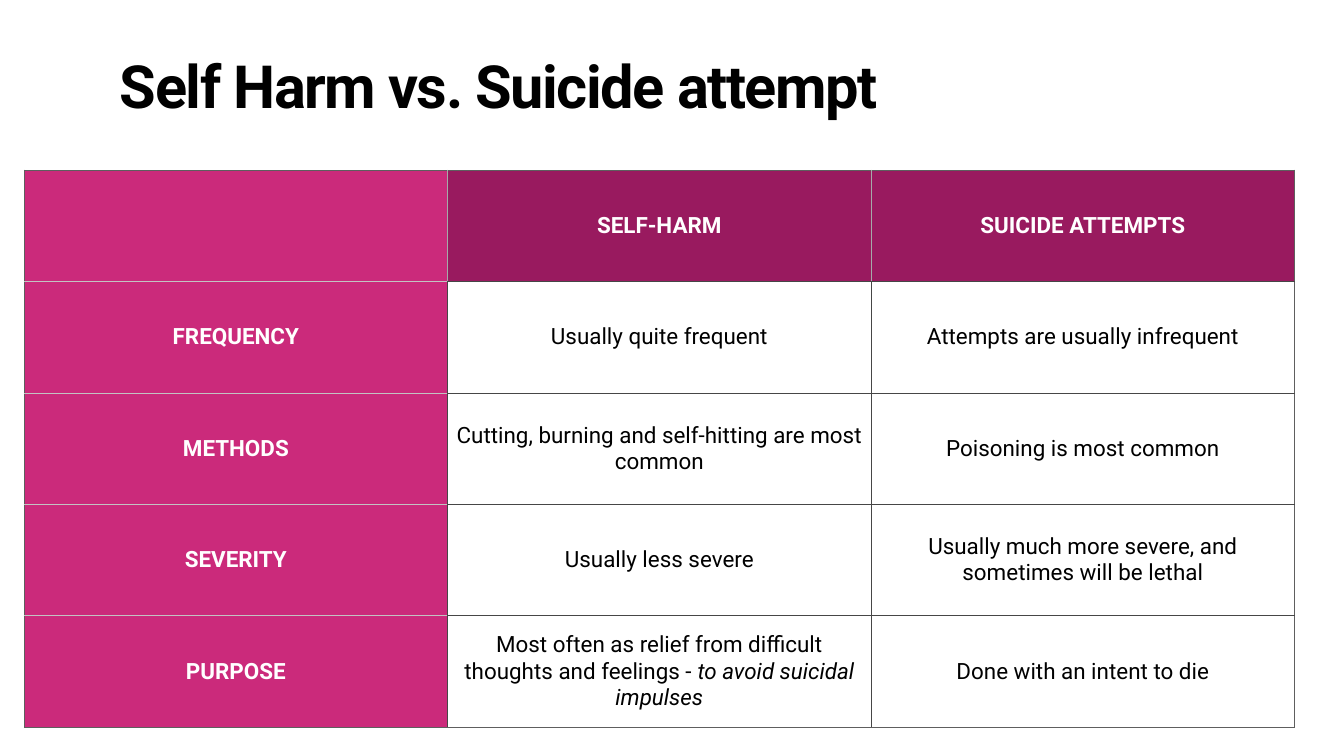
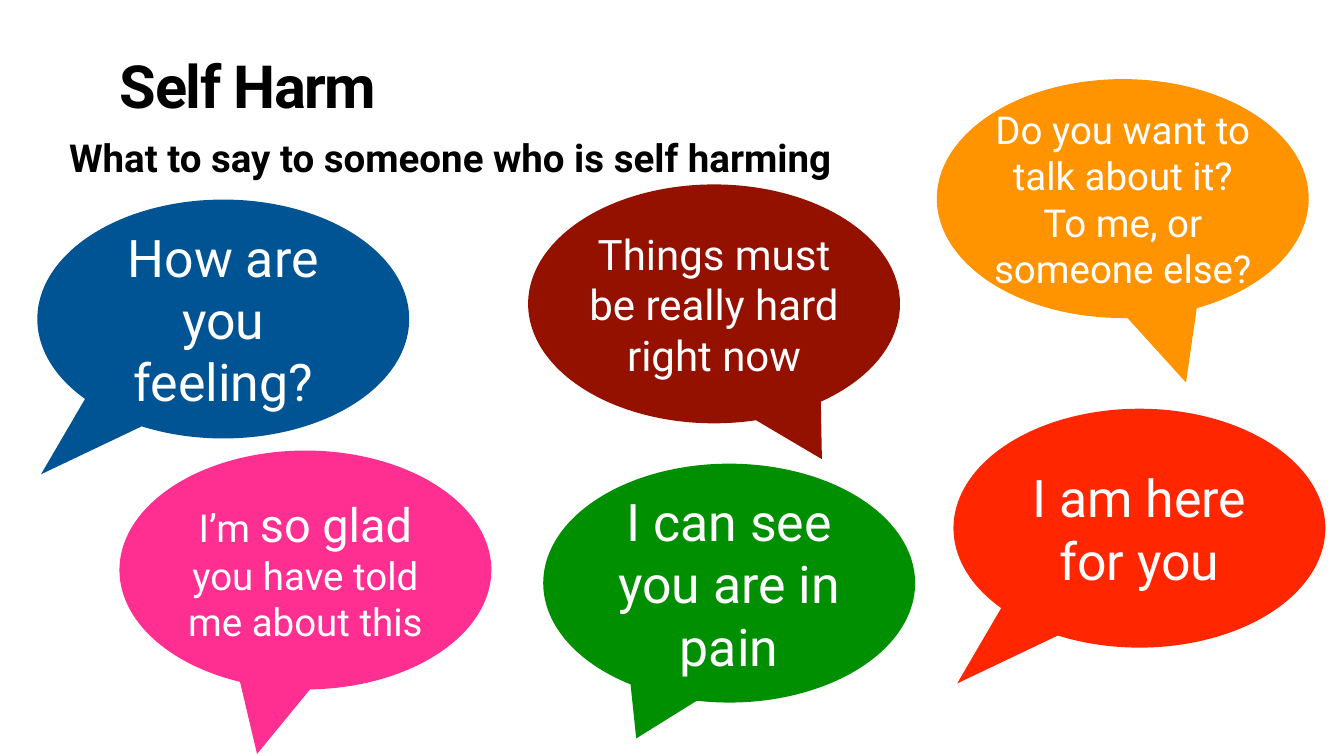
"""Build two slides on self harm: a comparison table and speech bubbles."""
from dataclasses import dataclass

from lxml import etree
from pptx import Presentation
from pptx.dml.color import RGBColor
from pptx.enum.shapes import MSO_SHAPE
from pptx.enum.text import MSO_ANCHOR, PP_ALIGN
from pptx.oxml.ns import qn
from pptx.util import Inches, Pt

CALLOUT = MSO_SHAPE.OVAL_CALLOUT
MIDDLE, TOP = MSO_ANCHOR.MIDDLE, MSO_ANCHOR.TOP
CENTER, LEFT = PP_ALIGN.CENTER, PP_ALIGN.LEFT

FONT = "Roboto"
BLACK, WHITE = "000000", "FFFFFF"
HEADER_FILL, LABEL_FILL = "991A5F", "CB2A7B"
OUTER_LINE, LABEL_LINE = "5E5E5E", "C3C3C3"
HEADER_LINE, BODY_LINE = "A6AAA9", "464646"
INSET = 0.06
BUBBLE_WIDTH, BUBBLE_HEIGHT = 7.38, 4.74
WORDS_WIDTH = 5.26
TABLE_AREA = (0.48, 3.37, 25.21, 11.06)


@dataclass(frozen=True)
class Span:
    """A piece of text with one size and slant."""
    text: str
    size: float
    italic: bool = False


@dataclass(frozen=True)
class Bubble:
    """A speech bubble with its tail tip and words."""
    left: float
    top: float
    tail: tuple[float, float]
    color: str
    words_height: float
    spans: tuple[Span, ...]


ROWS = (
    ("", "SELF-HARM", "SUICIDE ATTEMPTS"),
    ("FREQUENCY", "Usually quite frequent", "Attempts are usually infrequent"),
    ("METHODS", "Cutting, burning and self-hitting are most common",
     "Poisoning is most common"),
    ("SEVERITY", "Usually less severe",
     "Usually much more severe, and sometimes will be lethal"),
    ("PURPOSE",
     "Most often as relief from difficult thoughts and feelings - |to avoid suicidal impulses",
     "Done with an intent to die"),
)

BUBBLES = (
    Bubble(0.74, 3.96, (-0.49, 0.65), "005493", 3.83, (Span("How are you feeling?", 74),)),
    Bubble(10.48, 3.66, (0.29, 0.65), "941100", 4.2,
           (Span("Things must be really hard right now", 60),)),
    Bubble(2.37, 8.94, (-0.13, 0.77), "FF2F92", 3.12,
           (Span("I’m ", 55), Span("so glad", 67), Span(" you have told me about this", 55))),
    Bubble(18.59, 1.57, (0.17, 0.77), "FF9300", 4.81,
           (Span("Do you want to talk about it? To me, or someone else?", 55),)),
    Bubble(18.92, 8.11, (-0.49, 0.65), "FF2600", 2.58, (Span("I am here for you", 74),)),
    Bubble(10.78, 9.2, (-0.25, 0.65), "008F00", 3.83, (Span("I can see you are in pain", 74),)),
)


def rgb(color: str) -> RGBColor:
    """Turn a hex string into a colour."""
    return RGBColor.from_string(color)


def apply(target, values: dict) -> None:
    """Set each named attribute on the target."""
    for name, value in values.items():
        setattr(target, name, value)


def write(para, spans, color: str, bold: bool, align) -> None:
    """Fill a paragraph with formatted spans."""
    para.alignment = align
    for span in spans:
        run = para.add_run()
        run.text = span.text
        apply(run.font, {"name": FONT, "size": Pt(span.size),
                         "bold": bold, "italic": span.italic})
        run.font.color.rgb = rgb(color)


def margins(inset: float) -> dict:
    """Give equal margins for a text frame or a cell."""
    sides = ("left", "top", "right", "bottom")
    return {f"margin_{side}": Inches(inset) for side in sides}


def add_text(shapes, area, spans, color: str = BLACK, bold: bool = True,
             align=LEFT, anchor=TOP, inset: float = INSET):
    """Add a wrapping text box and return its paragraph."""
    frame = shapes.add_textbox(*map(Inches, area)).text_frame
    apply(frame, {"word_wrap": True, "vertical_anchor": anchor, **margins(inset)})
    para = frame.paragraphs[0]
    write(para, spans, color, bold, align)
    return para


def add_title(page, text: str) -> None:
    """Add the shared slide title with its first-line indent."""
    para = add_text(page.shapes, (1.32, 1.18, 24.03, 1.57), (Span(text, 85),))
    para.line_spacing = 0.8
    properties = para._p.get_or_add_pPr()
    properties.set("marL", "0")
    properties.set("indent", str(Inches(1)))
    para.runs[0].font._element.set("spc", "-200")


def edge_color(row: int, column: int, side: str) -> str:
    """Choose the border colour for one side of a cell."""
    outer = {"L": column == 0, "R": column == len(ROWS[0]) - 1,
             "T": row == 0, "B": row == len(ROWS) - 1}
    if outer[side]:
        return OUTER_LINE
    if side in "TB":
        return LABEL_LINE if column == 0 else BODY_LINE
    return HEADER_LINE if row == 0 else BODY_LINE


def add_borders(cell, row: int, column: int) -> None:
    """Draw the four borders of a cell."""
    properties = cell._tc.get_or_add_tcPr()
    for side in "LRTB":
        line = etree.SubElement(properties, qn(f"a:ln{side}"), w=str(Pt(1)))
        fill = etree.SubElement(line, qn("a:solidFill"))
        etree.SubElement(fill, qn("a:srgbClr"), val=edge_color(row, column, side))


def fill_cell(cell, row: int, column: int, text: str) -> None:
    """Format and fill one table cell."""
    add_borders(cell, row, column)
    strong = row == 0 or column == 0
    if strong:
        cell.fill.solid()
        cell.fill.fore_color.rgb = rgb(LABEL_FILL if column == 0 else HEADER_FILL)
    else:
        cell.fill.background()
    apply(cell, {"vertical_anchor": MIDDLE, **margins(INSET)})
    if text:
        spans = [Span(part, 32, index == 1) for index, part in enumerate(text.split("|"))]
        write(cell.text_frame.paragraphs[0], spans, WHITE if strong else BLACK, strong, CENTER)


def add_comparison(page) -> None:
    """Add the table that compares self-harm and suicide attempts."""
    table = page.shapes.add_table(len(ROWS), len(ROWS[0]), *map(Inches, TABLE_AREA)).table
    apply(table, {"first_row": False, "horz_banding": False})
    for row, texts in enumerate(ROWS):
        for column, text in enumerate(texts):
            fill_cell(table.cell(row, column), row, column, text)


def add_bubble(page, bubble: Bubble) -> None:
    """Add one speech bubble grouped with its centred words."""
    shapes = page.shapes.add_group_shape().shapes
    area = (bubble.left, bubble.top, BUBBLE_WIDTH, BUBBLE_HEIGHT)
    shape = shapes.add_shape(CALLOUT, *map(Inches, area))
    shape.shadow.inherit = False
    shape.fill.solid()
    shape.fill.fore_color.rgb = rgb(bubble.color)
    shape.line.fill.background()
    for index, value in enumerate(bubble.tail):
        shape.adjustments[index] = value
    words = (bubble.left + (BUBBLE_WIDTH - WORDS_WIDTH) / 2,
             bubble.top + (BUBBLE_HEIGHT - bubble.words_height) / 2,
             WORDS_WIDTH, bubble.words_height)
    add_text(shapes, words, bubble.spans, WHITE, False, CENTER, MIDDLE)


def main() -> None:
    """Build and save the deck."""
    deck = Presentation()
    apply(deck, {"slide_width": Inches(26.67), "slide_height": Inches(15)})
    blank = deck.slide_layouts[6]

    comparison = deck.slides.add_slide(blank)
    add_title(comparison, "Self Harm vs. Suicide attempt")
    add_comparison(comparison)

    phrases = deck.slides.add_slide(blank)
    add_title(phrases, "Self Harm")
    add_text(phrases.shapes, (1.32, 2.6, 24.03, 1.02),
             (Span("What to say to someone who is self harming", 55),), inset=0.05)
    for bubble in BUBBLES:
        add_bubble(phrases, bubble)

    deck.save("out.pptx")


if __name__ == "__main__":
    main()
